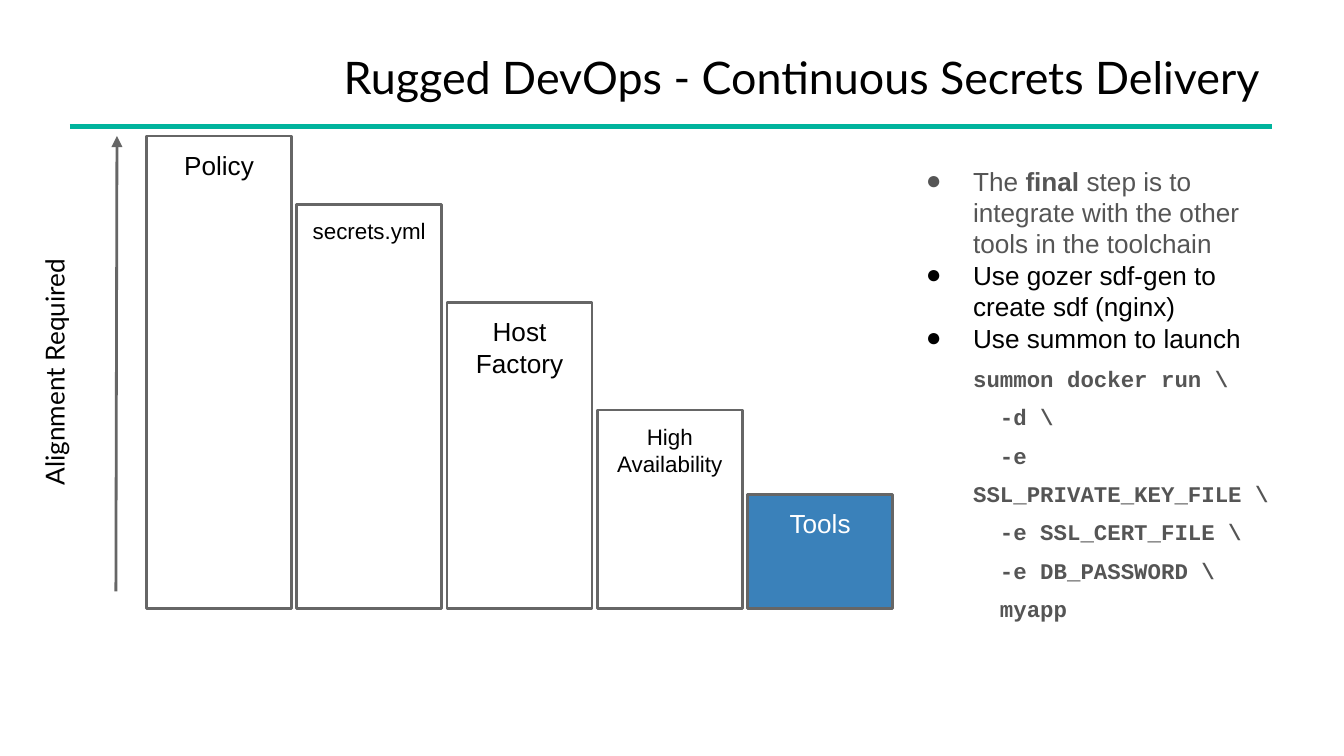
from lxml.etree import SubElement
from pptx import Presentation
from pptx.dml.color import RGBColor
from pptx.enum.shapes import MSO_CONNECTOR, MSO_SHAPE
from pptx.enum.text import MSO_ANCHOR, MSO_AUTO_SIZE, PP_ALIGN
from pptx.oxml.ns import qn
from pptx.util import Cm, Pt

GREY, TEXT_GREY, BLACK, WHITE = "666666", "555555", "000000", "FFFFFF"
TEAL, BLUE = "00B49D", "3A81BA"

STEPS = [
    (["Policy"], 8.94, 14, WHITE, BLACK),
    (["secrets.yml"], 7.65, 12, WHITE, BLACK),
    (["Host", "Factory"], 5.79, 14, WHITE, BLACK),
    (["High", "Availability"], 3.76, 12, WHITE, BLACK),
    (["Tools"], 2.16, 14, BLUE, WHITE),
]
BULLETS = [
    ([("The ", False), ("final", True),
      (" step is to integrate with the other tools in the toolchain", False)], TEXT_GREY),
    ([("Use gozer sdf-gen to create sdf (nginx)", False)], BLACK),
    ([("Use summon to launch", False)], BLACK),
]
CODE = [
    "summon docker run \\",
    "  -d \\",
    "  -e SSL_PRIVATE_KEY_FILE \\",
    "  -e SSL_CERT_FILE \\",
    "  -e DB_PASSWORD \\",
    "  myapp",
]


def color(value):
    """Turn a hex string into a colour."""
    return RGBColor.from_string(value)


def place(shape, left, top, width, height):
    """Move and size a shape in centimetres."""
    shape.left, shape.top = Cm(left), Cm(top)
    shape.width, shape.height = Cm(width), Cm(height)


def prepare_frame(shape, anchor=MSO_ANCHOR.TOP):
    """Give a shape wrapped text with even margins and return its frame."""
    frame = shape.text_frame
    frame.word_wrap = True
    frame.auto_size = MSO_AUTO_SIZE.NONE
    frame.vertical_anchor = anchor
    frame.margin_left = frame.margin_right = Cm(0.25)
    frame.margin_top = frame.margin_bottom = Cm(0.25)
    return frame


def next_paragraph(frame, index):
    """Return the first paragraph of a frame, or a new one after it."""
    return frame.paragraphs[0] if index == 0 else frame.add_paragraph()


def add_run(paragraph, text, size, font, hex_color, bold=False):
    """Add one formatted run."""
    run = paragraph.add_run()
    run.text = text
    run.font.size = Pt(size)
    run.font.name = font
    run.font.bold = bold
    run.font.color.rgb = color(hex_color)


def set_indent(paragraph, first_line, bullet_color=None):
    """Set the hanging indent and the bullet of a list paragraph."""
    properties = paragraph._p.get_or_add_pPr()
    properties.set("marL", str(Cm(1.27)))
    properties.set("indent", str(Cm(first_line)))
    if bullet_color is None:
        SubElement(properties, qn("a:buNone"))
    else:
        fill = SubElement(properties, qn("a:buClr"))
        SubElement(fill, qn("a:srgbClr"), val=bullet_color)
        SubElement(properties, qn("a:buFont"), typeface="Arial")
        SubElement(properties, qn("a:buChar"), char="●")
    paragraph.space_before = paragraph.space_after = Pt(0)


def add_line(slide, start, end, hex_color, width, arrow=False):
    """Draw a straight line, with an arrowhead at its end if asked."""
    line = slide.shapes.add_connector(
        MSO_CONNECTOR.STRAIGHT, *(Cm(value) for value in start + end))
    line.line.color.rgb = color(hex_color)
    line.line.width = Pt(width)
    if arrow:
        SubElement(line.line._get_or_add_ln(), qn("a:tailEnd"), type="triangle")
    SubElement(line._element.spPr, qn("a:effectLst"))


def build_header(slide, left, top, width, height):
    """Place the right-aligned title and the rule under it."""
    title = slide.shapes.title
    place(title, left, top, width, height)
    paragraph = prepare_frame(title, MSO_ANCHOR.BOTTOM).paragraphs[0]
    paragraph.alignment = PP_ALIGN.RIGHT
    add_run(paragraph, "Rugged DevOps - Continuous Secrets Delivery", 24, "Lato", BLACK)
    add_line(slide, (1.32, 2.39), (24.03, 2.39), TEAL, 3)


def build_steps(slide, left, bottom, width, pitch):
    """Draw the descending steps on a common base line."""
    for index, (lines, height, size, fill, text_color) in enumerate(STEPS):
        step = slide.shapes.add_shape(
            MSO_SHAPE.FLOWCHART_PROCESS, Cm(left + index * pitch),
            Cm(bottom - height), Cm(width), Cm(height))
        step.shadow.inherit = False
        step.fill.solid()
        step.fill.fore_color.rgb = color(fill)
        step.line.color.rgb = color(GREY)
        step.line.width = Pt(1.5)
        frame = prepare_frame(step)
        for number, text in enumerate(lines):
            paragraph = next_paragraph(frame, number)
            paragraph.alignment = PP_ALIGN.CENTER
            add_run(paragraph, text, size, "Arial", text_color)


def build_axis(slide, left, top, width, height):
    """Draw the upward arrow and its rotated label."""
    add_line(slide, (2.19, 11.18), (2.21, 2.57), GREY, 1.5, arrow=True)
    label = slide.shapes.add_textbox(
        Cm(left + (width - height) / 2), Cm(top + (height - width) / 2),
        Cm(height), Cm(width))
    label.rotation = 270
    paragraph = prepare_frame(label).paragraphs[0]
    paragraph.alignment = PP_ALIGN.CENTER
    add_run(paragraph, "Alignment Required", 14, "Lato", BLACK)


def build_notes(slide, left, top, width, height):
    """Fill the body with the bullets and the launch command."""
    body = slide.placeholders[1]
    place(body, left, top, width, height)
    frame = prepare_frame(body)
    for index, (runs, text_color) in enumerate(BULLETS):
        paragraph = next_paragraph(frame, index)
        set_indent(paragraph, -0.89, text_color)
        for text, bold in runs:
            add_run(paragraph, text, 14, "Arial", text_color, bold)
    for text in CODE:
        paragraph = frame.add_paragraph()
        set_indent(paragraph, 0)
        paragraph.line_spacing = 1.43
        add_run(paragraph, text, 12, "Courier New", TEXT_GREY, True)


def main():
    """Build and save the presentation."""
    presentation = Presentation()
    presentation.slide_width, presentation.slide_height = Cm(25.4), Cm(14.29)
    slide = presentation.slides.add_slide(presentation.slide_layouts[1])
    build_header(slide, 4.14, 0.18, 19.91, 2.03)
    build_steps(slide, 2.77, 11.51, 2.74, 2.84)
    build_notes(slide, 16.87, 2.87, 7.57, 8.64)
    build_axis(slide, 0.48, 2.77, 1.37, 8.53)
    presentation.save("out.pptx")


if __name__ == "__main__":
    main()
